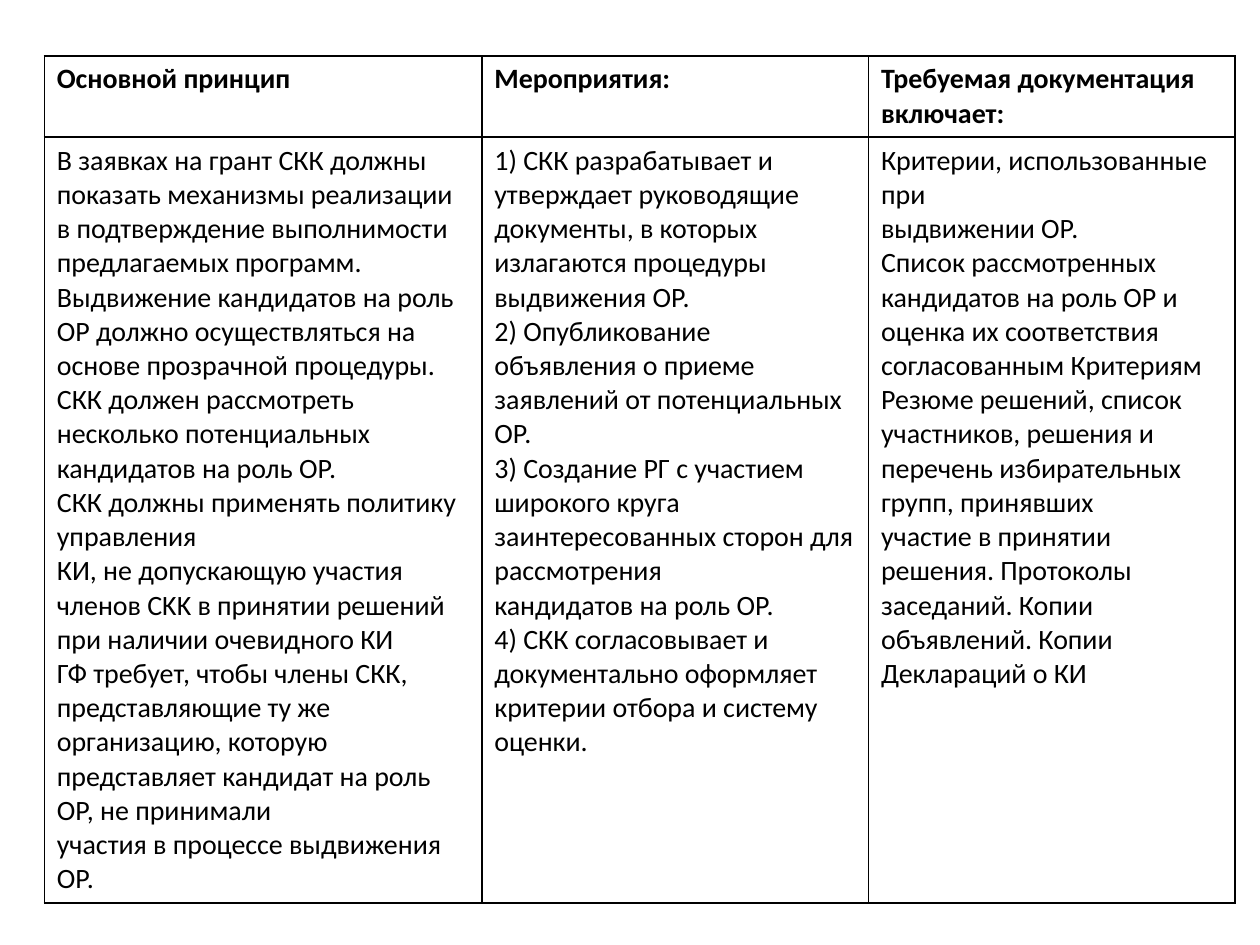
from lxml import etree
from pptx import Presentation
from pptx.dml.color import RGBColor
from pptx.oxml.ns import qn
from pptx.util import Pt

BLACK = RGBColor(0, 0, 0)
FONT = "Calibri"
COL_WIDTHS = [250, 221, 209.5]
ROW_HEIGHTS = [46, 437]

HEADERS = [
    "Основной принцип",
    "Мероприятия:",
    "Требуемая документация включает:",
]
PRINCIPLES = [
    "В заявках на грант СКК должны показать механизмы реализации в подтверждение выполнимости предлагаемых программ.",
    "Выдвижение кандидатов на роль ОР должно осуществляться на основе прозрачной процедуры.",
    "СКК должен рассмотреть несколько потенциальных",
    "кандидатов на роль ОР.",
    "СКК должны применять политику управления",
    "КИ, не допускающую участия членов CKK в принятии решений при наличии очевидного КИ",
    "ГФ требует, чтобы члены СКК, представляющие ту же организацию, которую",
    "представляет кандидат на роль ОР, не принимали",
    "участия в процессе выдвижения ОР.",
]
ACTIVITIES = [
    "1) СКК разрабатывает и утверждает руководящие",
    "документы, в которых излагаются процедуры",
    "выдвижения ОР.",
    "2) Опубликование объявления о приеме",
    "заявлений от потенциальных ОР.",
    "3) Создание РГ с участием широкого круга",
    "заинтересованных сторон для рассмотрения",
    "кандидатов на роль ОР.",
    "4) СКК согласовывает и документально оформляет критерии отбора и систему оценки.",
]
DOCUMENTS = [
    "Критерии, использованные при",
    "выдвижении ОР.",
    "Список рассмотренных",
    "кандидатов на роль ОР и оценка их соответствия согласованным Критериям",
    "Резюме решений, список",
    "участников, решения и перечень избирательных групп, принявших",
    "участие в принятии решения. Протоколы заседаний. Копии объявлений. Копии Деклараций о КИ",
]
ROWS = [[[header] for header in HEADERS], [PRINCIPLES, ACTIVITIES, DOCUMENTS]]


def set_borders(cell, color, width):
    tc_pr = cell._tc.get_or_add_tcPr()
    for side in ("a:lnL", "a:lnR", "a:lnT", "a:lnB"):
        line = etree.SubElement(tc_pr, qn(side), w=str(Pt(width)))
        fill = etree.SubElement(line, qn("a:solidFill"))
        etree.SubElement(fill, qn("a:srgbClr"), val=str(color))


def fill_cell(cell, lines, bold):
    set_borders(cell, BLACK, 1)
    cell.fill.background()
    tf = cell.text_frame
    tf.text = "\n".join(lines)
    for p in tf.paragraphs:
        font = p.runs[0].font
        font.name = FONT
        font.size = Pt(16)
        font.bold = bold
        font.color.rgb = BLACK


def add_requirements_table(s, left, top):
    table = s.shapes.add_table(
        len(ROWS), len(COL_WIDTHS), Pt(left), Pt(top),
        Pt(sum(COL_WIDTHS)), Pt(sum(ROW_HEIGHTS))).table
    table.first_row = False
    table.horz_banding = False
    for column, width in zip(table.columns, COL_WIDTHS):
        column.width = Pt(width)
    for r, (row, height) in enumerate(zip(ROWS, ROW_HEIGHTS)):
        table.rows[r].height = Pt(height)
        for c, lines in enumerate(row):
            fill_cell(table.cell(r, c), lines, bold=r == 0)


def main():
    prs = Presentation()
    prs.slide_width, prs.slide_height = Pt(720), Pt(540)
    s = prs.slides.add_slide(prs.slide_layouts[6])
    add_requirements_table(s, 25.3, 32)
    prs.save("out.pptx")


if __name__ == "__main__":
    main()
